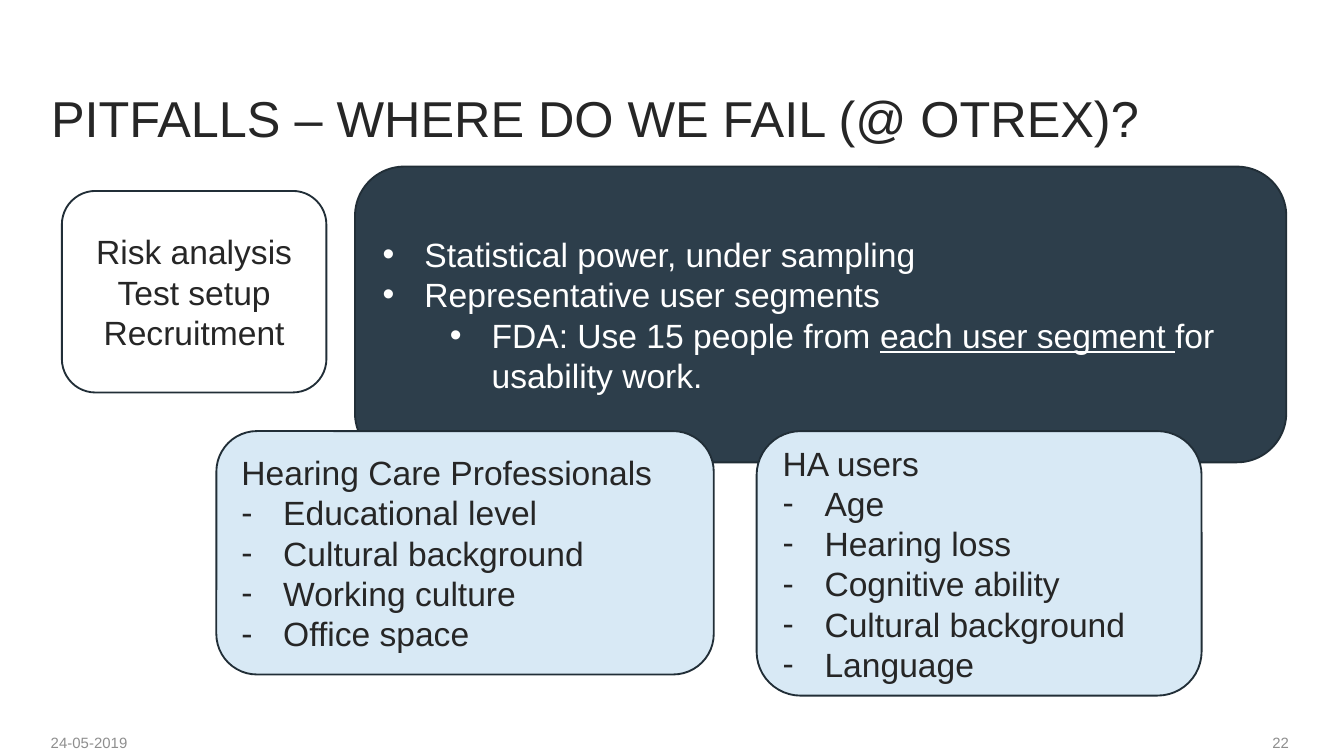
"""Build the slide on pitfalls in usability testing."""
import pptx
import pptx.dml.color
import pptx.enum.shapes
import pptx.enum.text
import pptx.util
from lxml import etree
from pptx.oxml.ns import qn

Cm = pptx.util.Cm
Pt = pptx.util.Pt
RGBColor = pptx.dml.color.RGBColor
ALIGN = pptx.enum.text.PP_ALIGN
ANCHOR = pptx.enum.text.MSO_ANCHOR

INK = RGBColor(0x26, 0x26, 0x26)
GREY = RGBColor(0x8E, 0x8E, 0x8E)
WHITE = RGBColor(0xFF, 0xFF, 0xFF)
SLATE = RGBColor(0x2D, 0x3E, 0x4B)
PALE = RGBColor(0xD8, 0xE9, 0xF5)
EDGE = RGBColor(0x21, 0x2E, 0x37)

HANG = 0.79
LEVEL_STEP = 1.27
BOX_TOP = 8.15

TITLE = "PITFALLS – WHERE DO WE FAIL (@ OTREX)?"
TITLE_BOX = (0.71, 0.56, 24, 2.36)

FOOTERS = [
    ("24-05-2019", 0.71, ALIGN.LEFT),
    ("22", 18.69, ALIGN.RIGHT),
]

BOXES = [
    {"at": (6.71, 3.15, 17.6, 5.59), "fill": SLATE, "color": WHITE, "bullet": "•",
     "items": [("Statistical power, under sampling", 0),
               ("Representative user segments", 0),
               (("FDA: Use 15 people from ", "each user segment ", "for usability work."), 1)],
     "underlined": "each user segment "},
    {"at": (14.3, BOX_TOP, 8.41, 5), "fill": PALE, "color": INK, "bullet": "-",
     "heading": ["HA users"],
     "items": [(s, 0) for s in ("Age", "Hearing loss", "Cognitive ability",
                                "Cultural background", "Language")]},
    {"at": (4.09, BOX_TOP, 9.4, 4.6), "fill": PALE, "color": INK, "bullet": "-",
     "heading": ["Hearing Care Professionals"],
     "items": [(s, 0) for s in ("Educational level", "Cultural background",
                                "Working culture", "Office space")]},
    {"at": (1.17, 3.61, 5, 3.81), "fill": None, "color": INK, "align": ALIGN.CENTER,
     "heading": ["Risk analysis", "Test setup", "Recruitment"]},
]


def cms(values):
    return [Cm(v) for v in values]


def style(p, size, color, align=ALIGN.LEFT):
    p.alignment = align
    for r in p.runs:
        r.font.name = "Arial"
        r.font.size = Pt(size)
        r.font.color.rgb = color


def add_bullet(p, char, level):
    p.level = level
    pPr = p._p.get_or_add_pPr()
    pPr.set("marL", str(Cm(HANG + level * LEVEL_STEP)))
    pPr.set("indent", str(-Cm(HANG)))
    etree.SubElement(pPr, qn("a:buFont")).set("typeface", "Arial")
    etree.SubElement(pPr, qn("a:buChar")).set("char", char)


def add_box(slide, box):
    kind = pptx.enum.shapes.MSO_SHAPE.ROUNDED_RECTANGLE
    sp = slide.shapes.add_shape(kind, *cms(box["at"]))
    sp.shadow.inherit = False
    if box["fill"] is None:
        sp.fill.background()
    else:
        sp.fill.solid()
        sp.fill.fore_color.rgb = box["fill"]
    sp.line.color.rgb = EDGE
    sp.line.width = Pt(1)
    tf = sp.text_frame
    tf.word_wrap = True
    tf.vertical_anchor = ANCHOR.MIDDLE
    rows = [(s, None) for s in box.get("heading", [])] + box.get("items", [])
    for i, (text, level) in enumerate(rows):
        p = tf.add_paragraph() if i else tf.paragraphs[0]
        if level is not None:
            add_bullet(p, box["bullet"], level)
        for part in (text,) if isinstance(text, str) else text:
            r = p.add_run()
            r.text = part
            if part == box.get("underlined"):
                r.font.underline = True
        style(p, 18, box["color"], box.get("align", ALIGN.LEFT))


def add_footer(slide, text, left, align):
    sp = slide.shapes.add_textbox(*cms((left, 13.87, 5.92, 1.02)))
    tf = sp.text_frame
    tf.word_wrap = True
    tf.margin_top = 0
    tf.margin_bottom = Cm(0.1)
    tf.text = text
    style(tf.paragraphs[0], 8, GREY, align)


def add_title(slide):
    sp = slide.shapes.title
    sp.left, sp.top, sp.width, sp.height = cms(TITLE_BOX)
    tf = sp.text_frame
    tf.text = TITLE
    tf.word_wrap = True
    tf.vertical_anchor = ANCHOR.BOTTOM
    style(tf.paragraphs[0], 27, INK)


def main():
    prs = pptx.Presentation()
    prs.slide_width, prs.slide_height = cms((25.4, 14.29))
    slide = prs.slides.add_slide(prs.slide_layouts.get_by_name("Title Only"))
    add_title(slide)
    for footer in FOOTERS:
        add_footer(slide, *footer)
    for box in BOXES:
        add_box(slide, box)
    prs.save("out.pptx")


if __name__ == "__main__":
    main()
